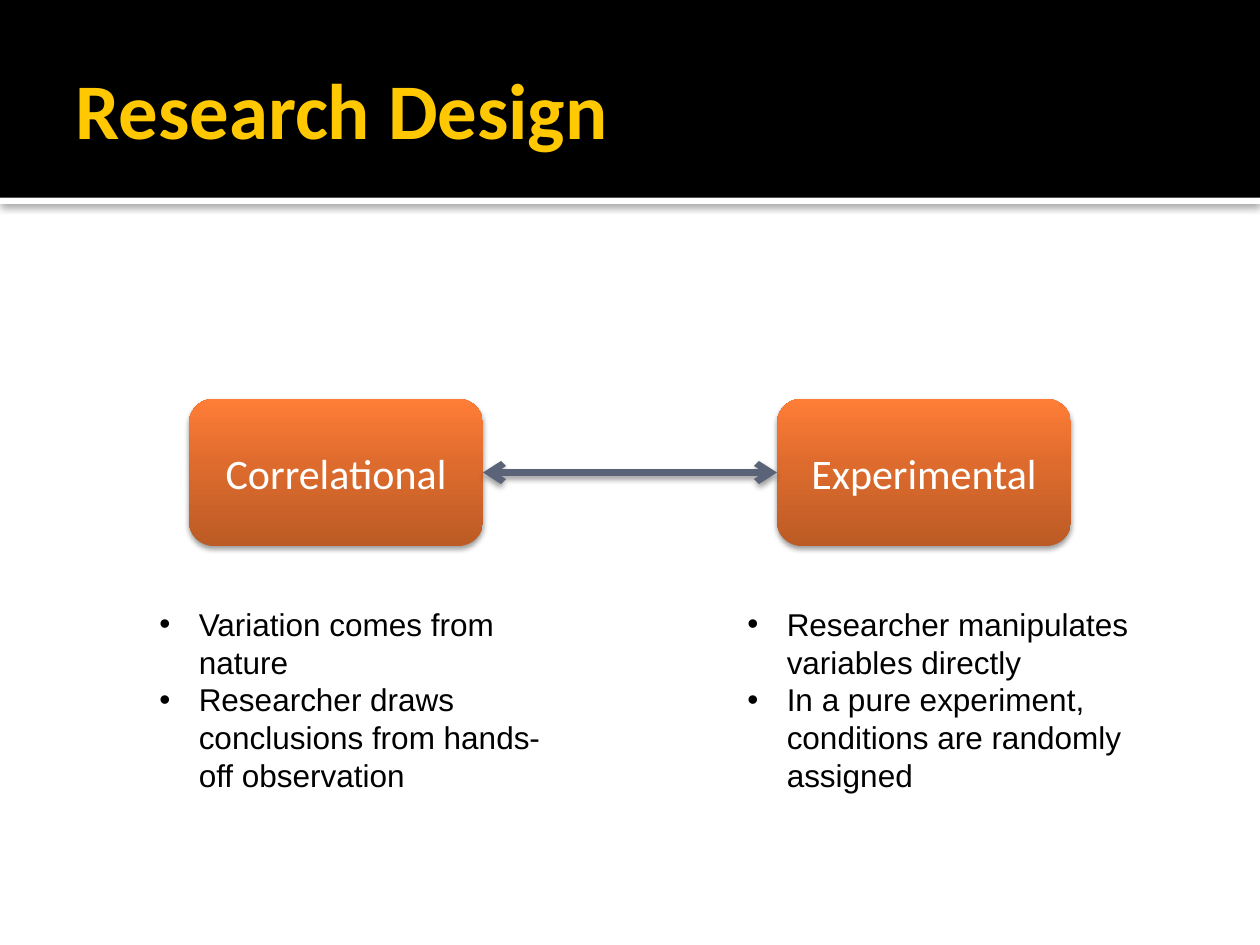
from copy import deepcopy

from lxml import etree
from pptx import Presentation
from pptx.dml.color import RGBColor
from pptx.enum import shapes, text
from pptx.oxml.ns import qn
from pptx.util import Pt

COLORS = {
    "black": "000000",
    "white": "FFFFFF",
    "gold": "FFC800",
    "slate": "5A6378",
}
ORANGE_STOPS = [(0, "BC5B26"), (0.55, "DD6B2D"), (1, "FF7D37")]


def rgb(name):
    return RGBColor.from_string(COLORS[name])


def write(p, content, font="Calibri", size=24, color="white", bold=False,
          align=text.PP_ALIGN.LEFT):
    """Put one formatted run into a paragraph."""
    p.alignment = align
    r = p.add_run()
    r.text = content
    r.font.name, r.font.size, r.font.bold = font, Pt(size), bold
    r.font.color.rgb = rgb(color)


def add_shadow(sp, alpha, blur, dist):
    """Give a shape or connector a soft shadow straight below it."""
    props = sp._element.spPr
    effects = props.find(qn("a:effectLst"))
    if effects is None:
        effects = etree.SubElement(props, qn("a:effectLst"))
    shadow = etree.SubElement(
        effects, qn("a:outerShdw"), blurRad=str(Pt(blur)), dist=str(Pt(dist)),
        dir="5400000", algn="ctr", rotWithShape="0")
    color = etree.SubElement(shadow, qn("a:srgbClr"), val=COLORS["black"])
    etree.SubElement(color, qn("a:alpha"), val=str(alpha * 1000))


class Deck:
    def __init__(self, prs):
        self.s = prs.slides.add_slide(prs.slide_layouts[5])

    def shape(self, kind, left, top, width, height):
        sp = self.s.shapes.add_shape(kind, Pt(left), Pt(top), Pt(width), Pt(height))
        sp.shadow.inherit = False
        sp.line.fill.background()
        return sp

    def band(self, top, height, color):
        sp = self.shape(shapes.MSO_SHAPE.RECTANGLE, 0, top, 720, height)
        sp.fill.solid()
        sp.fill.fore_color.rgb = rgb(color)
        return sp

    def title(self, content):
        sp = self.s.shapes.title
        sp.left, sp.top, sp.width, sp.height = Pt(36), Pt(12), Pt(648), Pt(99)
        self.s.shapes._spTree.append(sp._element)  # bring in front of the band
        tf = sp.text_frame
        tf.auto_size = text.MSO_AUTO_SIZE.NONE
        tf.vertical_anchor = text.MSO_ANCHOR.MIDDLE
        tf.margin_left = Pt(7.2)
        tf.margin_top = tf.margin_right = tf.margin_bottom = Pt(3.6)
        write(tf.paragraphs[0], content, size=45, color="gold", bold=True)

    def box(self, left, label):
        sp = self.shape(shapes.MSO_SHAPE.ROUNDED_RECTANGLE, left, 228, 168, 84)
        sp.fill.gradient()
        sp.fill.gradient_angle = 90
        stops = sp.fill.gradient_stops
        first = stops[0]._gs
        first.addnext(deepcopy(first))
        for stop, (position, color) in zip(sp.fill.gradient_stops, ORANGE_STOPS):
            stop.position = position
            stop.color.rgb = RGBColor.from_string(color)
        add_shadow(sp, 38, 3.1, 2)
        tf = sp.text_frame
        tf.vertical_anchor = text.MSO_ANCHOR.MIDDLE
        write(tf.paragraphs[0], label, align=text.PP_ALIGN.CENTER)
        return sp

    def double_arrow(self, start, end):
        line = self.s.shapes.add_connector(shapes.MSO_CONNECTOR.STRAIGHT, 0, 0, 0, 0)
        line.begin_connect(start, 1)
        line.end_connect(end, 3)
        line.line.color.rgb = rgb("slate")
        line.line.width = Pt(3.78)
        for tip in ("a:headEnd", "a:tailEnd"):
            etree.SubElement(line.line._get_or_add_ln(), qn(tip), type="arrow")
        add_shadow(line, 38, 3.5, 2)

    def bullets(self, left, width, items):
        sp = self.s.shapes.add_textbox(Pt(left), Pt(342), Pt(width), Pt(116.6))
        tf = sp.text_frame
        tf.word_wrap = True
        tf.auto_size = text.MSO_AUTO_SIZE.SHAPE_TO_FIT_TEXT
        for i, item in enumerate(items):
            p = tf.add_paragraph() if i else tf.paragraphs[0]
            write(p, item, font="Arial", size=18, color="black")
            props = p._p.get_or_add_pPr()
            props.set("marL", str(Pt(22.5)))
            props.set("indent", str(-Pt(22.5)))
            etree.SubElement(props, qn("a:buFont"), typeface="Arial")
            etree.SubElement(props, qn("a:buChar"), char="•")


def main():
    prs = Presentation()
    prs.slide_width, prs.slide_height = Pt(720), Pt(540)
    deck = Deck(prs)

    # Header
    add_shadow(deck.band(113, 3.6, "white"), 60, 5, 0.8)
    deck.band(0, 113, "black")
    deck.title("Research Design")

    # The two designs and the arrow between them
    correlational = deck.box(108, "Correlational")
    experimental = deck.box(444, "Experimental")
    deck.double_arrow(experimental, correlational)

    # Notes under each design
    deck.bullets(84, 234, [
        "Variation comes from nature",
        "Researcher draws conclusions from hands-off observation",
    ])
    deck.bullets(420, 252, [
        "Researcher manipulates variables directly",
        "In a pure experiment, conditions are randomly assigned",
    ])

    prs.save("out.pptx")


if __name__ == "__main__":
    main()
